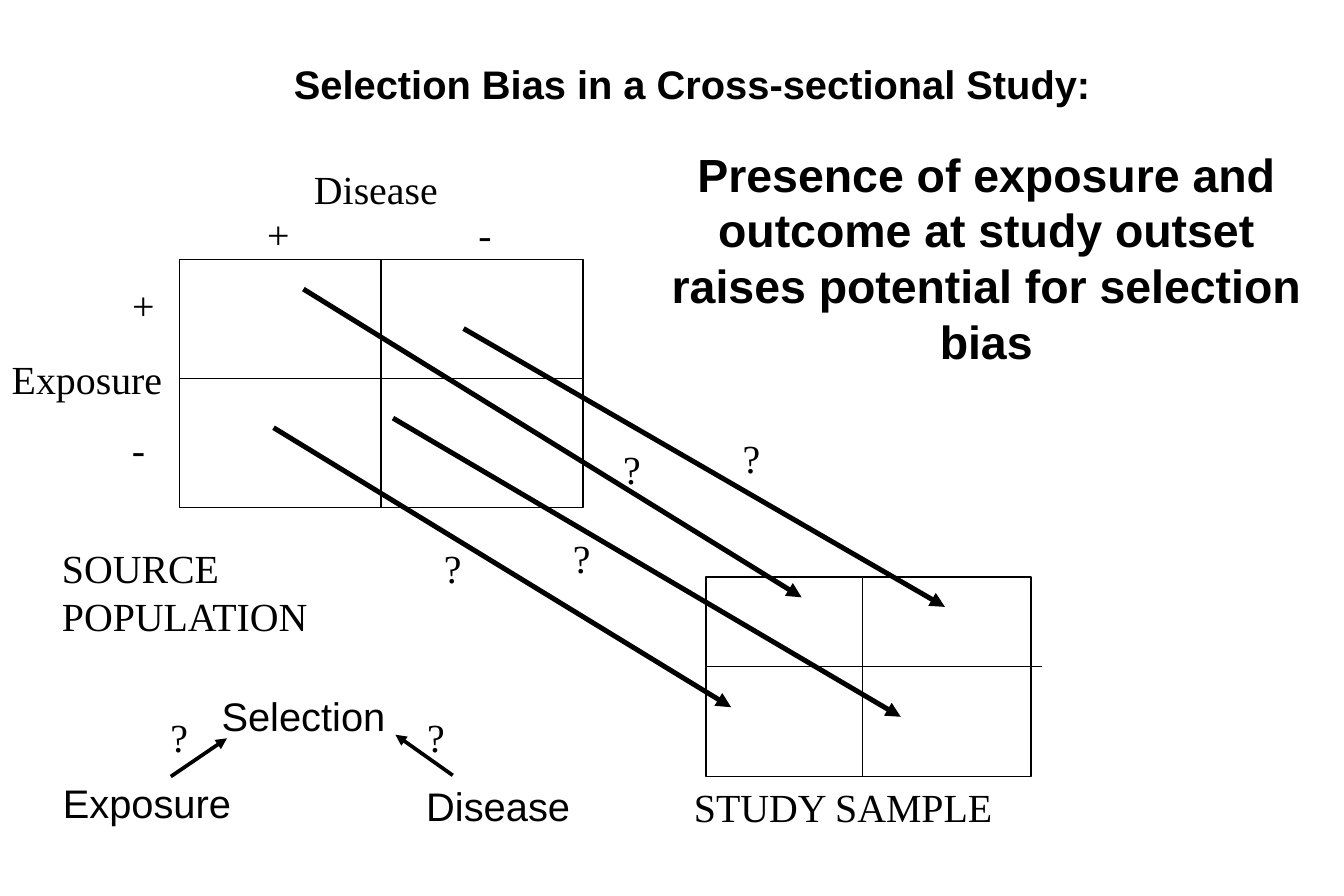
from lxml import etree
from pptx import Presentation
from pptx.dml.color import RGBColor
from pptx.enum.shapes import MSO_CONNECTOR, MSO_SHAPE
from pptx.enum.text import MSO_ANCHOR, MSO_AUTO_SIZE, PP_ALIGN
from pptx.oxml.ns import qn
from pptx.util import Pt

PX = 9144  # 100 px to the inch
COLORS = {"ink": "000000"}
SERIF, SANS = "Times New Roman", "Arial"

TITLE = "Selection Bias in a Cross-sectional Study:"
TITLE_BOX = (17, 41, 1125, 58)
STATEMENT = ("Presence of exposure and outcome at study outset "
             "raises potential for selection bias")
STATEMENT_BOX = (538, 117, 575, 199)

# Two-by-two grids: left, top, width, height
SOURCE_GRID = (150, 217, 338, 208)
SAMPLE_GRID = (591, 483, 272, 167)
SOURCE_ROW = (150, 317, 488, 317)
SAMPLE_COLUMN = (722, 483, 722, 650)
SAMPLE_ROW = (591, 558, 872, 558)

# Left-aligned labels: text, box, wrap
GRID_LABELS = [
    ("Disease", (253, 133, 124, 50), False),
    ("Exposure", (0, 292, 146, 50), False),
    ("SOURCE POPULATION", (42, 450, 250, 91), True),
    ("STUDY SAMPLE", (571, 650, 271, 50), False),
]

# Single signs in square boxes: text, left, top
SIGN_SIZE = 50
SIGNS = [
    ("+", 208, 171), ("-", 381, 171), ("+", 95, 230), ("-", 91, 351),
    ("?", 462, 442), ("?", 504, 367), ("?", 604, 358), ("?", 354, 450),
    ("?", 125, 592), ("?", 340, 592),
]

# Arrows: from x, from y, to x, to y
SAMPLING_ARROWS = [
    (388, 275, 791, 508), (254, 242, 671, 500),
    (329, 350, 754, 600), (229, 358, 612, 592),
]
CAUSAL_ARROWS = [(143, 650, 190, 618), (379, 649, 331, 615)]

# Causal diagram nodes: text, left, top
NODE_SIZE = (392, 51)
NODES = [("Selection", 58, 574), ("Exposure", -73, 647), ("Disease", 221, 649)]


def emu(lengths):
    return [length * PX for length in lengths]


def ink():
    return RGBColor.from_string(COLORS["ink"])


def write(frame, text, font, size, align, bold=False):
    frame.text = text
    para = frame.paragraphs[0]
    para.alignment = align
    span = para.runs[0]
    span.font.name = font
    span.font.size = Pt(size)
    span.font.bold = bold
    span.font.color.rgb = ink()


def add_label(page, text, area, font=SERIF, size=24, align=PP_ALIGN.CENTER,
              bold=False, wrap=True):
    box = page.shapes.add_textbox(*emu(area))
    write(box.text_frame, text, font, size, align, bold)
    box.text_frame.word_wrap = wrap
    box.text_frame.auto_size = MSO_AUTO_SIZE.SHAPE_TO_FIT_TEXT


def add_grid(page, area):
    box = page.shapes.add_shape(MSO_SHAPE.RECTANGLE, *emu(area))
    box.shadow.inherit = False
    box.fill.background()
    box.line.color.rgb = ink()
    box.line.width = Pt(0.75)
    return box


def add_line(page, ends, width=0.75, arrow=False):
    line = page.shapes.add_connector(MSO_CONNECTOR.STRAIGHT, *emu(ends))
    line.line.color.rgb = ink()
    line.line.width = Pt(width)
    if arrow:
        etree.SubElement(line.line._get_or_add_ln(), qn("a:tailEnd"), type="triangle")
    etree.SubElement(line._element.spPr, qn("a:effectLst"))
    return line


def main():
    deck = Presentation()
    deck.slide_width, deck.slide_height = emu((1125, 750))
    page = deck.slides.add_slide(deck.slide_layouts[5])

    # Title and statement
    title = page.shapes.title
    title.left, title.top, title.width, title.height = emu(TITLE_BOX)
    write(title.text_frame, TITLE, SANS, 24, PP_ALIGN.CENTER, bold=True)
    title.text_frame.vertical_anchor = MSO_ANCHOR.MIDDLE
    title.text_frame.auto_size = MSO_AUTO_SIZE.NONE
    add_label(page, STATEMENT, STATEMENT_BOX, SANS, 28, bold=True)

    # Source and sample grids
    source = add_grid(page, SOURCE_GRID)
    add_grid(page, SAMPLE_GRID)
    left, top, width, height = SOURCE_GRID
    middle = left + width // 2
    source_column = add_line(page, (middle, top, middle, top + height))
    source_column.begin_connect(source, 0)
    source_column.end_connect(source, 2)
    for ends in (SOURCE_ROW, SAMPLE_COLUMN, SAMPLE_ROW):
        add_line(page, ends)

    # Arrows
    for ends in SAMPLING_ARROWS:
        add_line(page, ends, 3, arrow=True)
    for ends in CAUSAL_ARROWS:
        add_line(page, ends, 2.25, arrow=True)

    # Labels, signs and causal diagram nodes
    for text, area, wrap in GRID_LABELS:
        add_label(page, text, area, align=PP_ALIGN.LEFT, wrap=wrap)
    for text, left, top in SIGNS:
        add_label(page, text, (left, top, SIGN_SIZE, SIGN_SIZE))
    for text, left, top in NODES:
        add_label(page, text, (left, top, *NODE_SIZE), SANS)

    deck.save("out.pptx")


if __name__ == "__main__":
    main()
